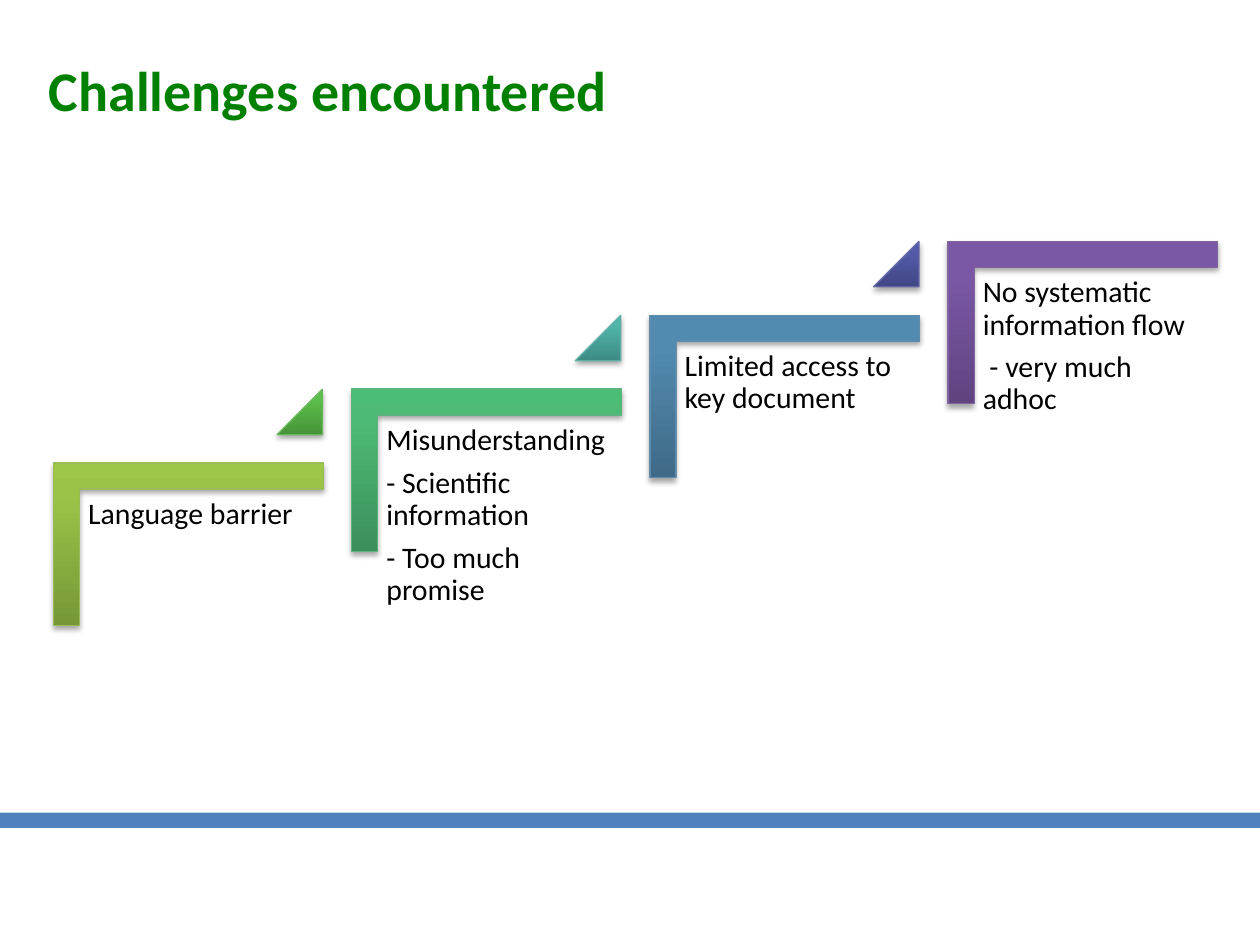
import copy
from dataclasses import dataclass

import pptx
import pptx.dml.color
import pptx.enum.shapes
import pptx.enum.text
import pptx.oxml
import pptx.oxml.ns
import pptx.util
from pptx.util import Inches

SHAPES = pptx.enum.shapes.MSO_SHAPE
ANCHOR = pptx.enum.text.MSO_ANCHOR

SHADOW_XML = (
    f'<a:outerShdw {pptx.oxml.ns.nsdecls("a")} blurRad="40000" dist="23000" '
    'dir="5400000" rotWithShape="0">'
    '<a:srgbClr val="000000"><a:alpha val="35000"/></a:srgbClr></a:outerShdw>'
)


@dataclass
class Look:
    gradient: tuple[str, str, str]  # bottom, upper part, top
    line: str


@dataclass
class Step:
    lines: list[str]
    corner: Look
    triangle: Look | None = None


STEPS = [
    Step(["Language barrier"],
         Look(("779737", "9BC348", "9DC746"), "9BBB59"),
         Look(("479339", "5CBF4A", "5BC249"), "69B75B")),
    Step(["Misunderstanding", "- Scientific information", "- Too much promise"],
         Look(("3B8F5A", "4DBA75", "4BBD75"), "5CB37C"),
         Look(("3D8B83", "50B5AA", "4EB8AC"), "5EAFA6")),
    Step(["Limited access to key document"],
         Look(("3F6A88", "528AB0", "518BB3"), "608CAB"),
         Look(("414684", "555BAB", "545AAE"), "6267A6")),
    Step(["No systematic information flow", " - very much adhoc"],
         Look(("5F4480", "7B58A6", "7C57A8"), "8064A2")),
]
STEP_RIGHT = 7.1 / 3
STEP_UP = 1.76 / 3


def color(value: str) -> pptx.dml.color.RGBColor:
    return pptx.dml.color.RGBColor.from_string(value)


def add_text(slide, lines: list[str], left: float, top: float, width: float,
             height: float, *, size: float, fill: str = "000000",
             bold: bool = False, anchor=ANCHOR.TOP, inset: float | None = None,
             line_spacing: float = 1.0, space_after: float = 0) -> None:
    box = slide.shapes.add_textbox(Inches(left), Inches(top),
                                   Inches(width), Inches(height))
    frame = box.text_frame
    frame.word_wrap = True
    frame.vertical_anchor = anchor
    if inset is not None:
        frame.margin_left = frame.margin_right = Inches(inset)
        frame.margin_top = frame.margin_bottom = Inches(inset)
    for index, line in enumerate(lines):
        paragraph = frame.paragraphs[0] if index == 0 else frame.add_paragraph()
        paragraph.line_spacing = line_spacing
        paragraph.space_after = pptx.util.Pt(space_after)
        run = paragraph.add_run()
        run.text = line
        run.font.name = "Calibri"
        run.font.size = pptx.util.Pt(size)
        run.font.bold = bold
        run.font.color.rgb = color(fill)


def add_glossy_shape(slide, kind, look: Look, left: float, top: float,
                     width: float, height: float, adjustments: list[float],
                     rotation: float = 0) -> None:
    shape = slide.shapes.add_shape(kind, Inches(left), Inches(top),
                                   Inches(width), Inches(height))
    shape.rotation = rotation
    for index, adjustment in enumerate(adjustments):
        shape.adjustments[index] = adjustment

    # Gradient that stays upright when the shape is turned
    shape.fill.gradient()
    shape.fill.gradient_angle = 90
    gradient = shape._element.spPr.find(pptx.oxml.ns.qn("a:gradFill"))
    gradient.set("rotWithShape", "0")
    stop_list = gradient.find(pptx.oxml.ns.qn("a:gsLst"))
    stop_list.append(copy.deepcopy(stop_list[-1]))
    for stop, position, value in zip(shape.fill.gradient_stops, (0, 0.8, 1), look.gradient):
        stop.position = position
        stop.color.rgb = color(value)

    shape.line.color.rgb = color(look.line)
    shape.line.width = pptx.util.Pt(0.75)
    shape.shadow.inherit = False
    effects = shape._element.spPr.find(pptx.oxml.ns.qn("a:effectLst"))
    effects.append(pptx.oxml.parse_xml(SHADOW_XML))


def add_step(slide, step: Step, index: int) -> None:
    right, up = index * STEP_RIGHT, index * STEP_UP
    add_glossy_shape(slide, SHAPES.CORNER, step.corner, 0.85 + right, 3.25 - up,
                     1.29, 2.14, [0.16, 0.16], rotation=90)
    add_text(slide, step.lines, 0.63 + right, 3.89 - up, 1.93, 1.69, size=17,
             inset=0.07, line_spacing=0.9, space_after=6)
    if step.triangle:
        add_glossy_shape(slide, SHAPES.ISOSCELES_TRIANGLE, step.triangle,
                         2.2 + right, 3.09 - up, 0.36, 0.36, [1])


def main() -> None:
    presentation = pptx.Presentation()
    presentation.slide_width = Inches(10)
    presentation.slide_height = Inches(7.5)
    slide = presentation.slides.add_slide(presentation.slide_layouts[6])

    # Footer bar
    bar = slide.shapes.add_shape(SHAPES.RECTANGLE, Inches(0), Inches(6.45),
                                 Inches(10), Inches(0.12))
    bar.fill.solid()
    bar.fill.fore_color.rgb = color("4F81BD")
    bar.line.fill.background()
    bar.shadow.inherit = False

    # Title
    add_text(slide, ["Challenges encountered"], 0.29, 0.25, 9.5, 0.92,
             size=32, fill="008000", bold=True, anchor=ANCHOR.MIDDLE)

    # Rising staircase
    for index, step in enumerate(STEPS):
        add_step(slide, step, index)

    presentation.save("out.pptx")


if __name__ == "__main__":
    main()
